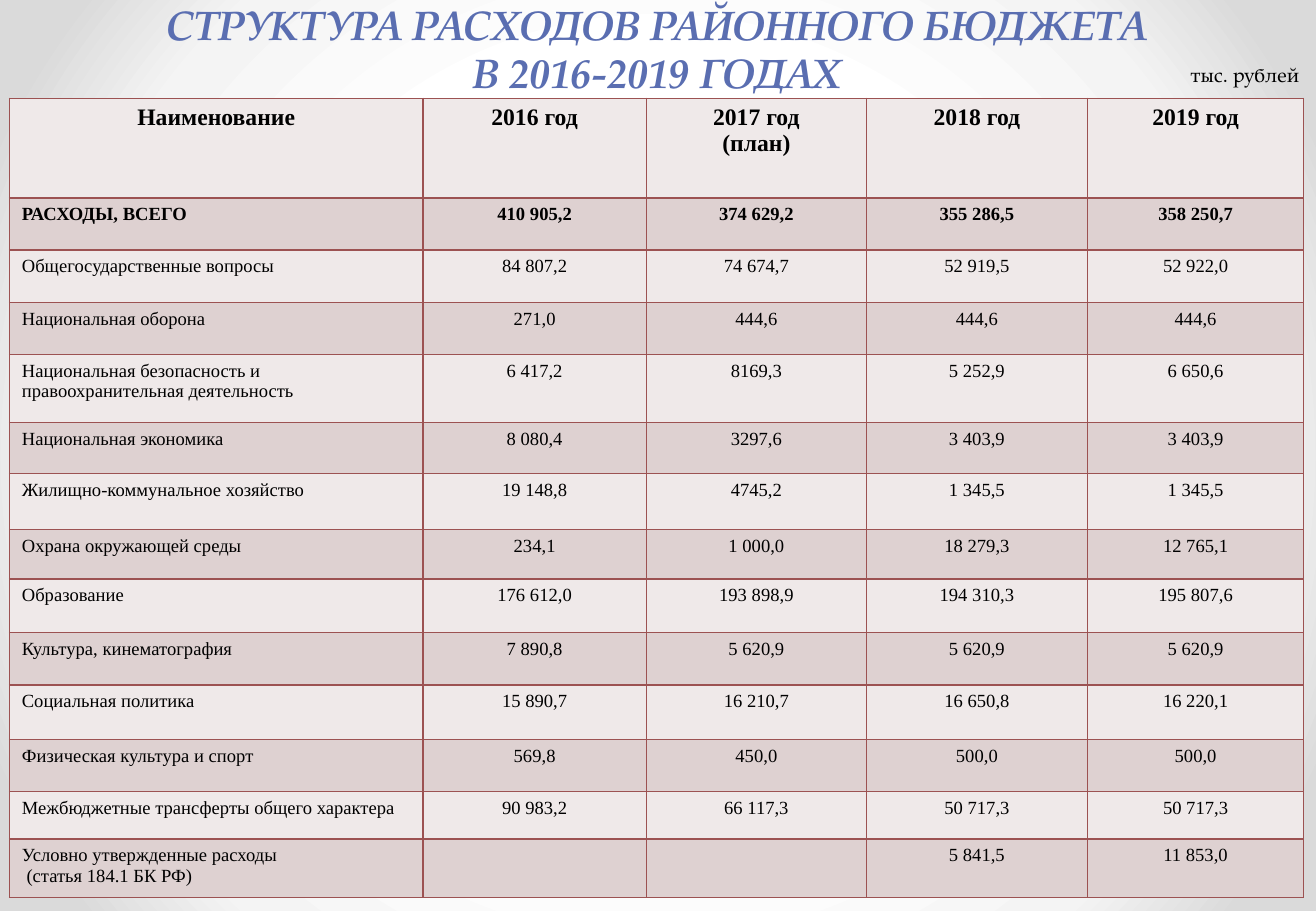
from dataclasses import dataclass

from lxml import etree
from pptx import Presentation
from pptx import util as u
from pptx.dml import color, fill as fills
from pptx.enum import text
from pptx.oxml import ns
from pptx.slide import Slide
from pptx.table import _Cell
from pptx.text.text import TextFrame

Inches, Pt, RGBColor = u.Inches, u.Pt, color.RGBColor

BLACK = RGBColor(0x00, 0x00, 0x00)
LIGHT_ROW = RGBColor(0xEF, 0xE9, 0xE9)
DARK_ROW = RGBColor(0xDE, 0xD1, 0xD1)
BORDER = RGBColor(0x9C, 0x52, 0x52)
PAGE_STOPS = [
    (50, RGBColor(0xFF, 0xFF, 0xFF)),
    (76, RGBColor(0xF4, 0xF4, 0xF4)),
    (92, RGBColor(0xDA, 0xDA, 0xDA)),
]
TITLE_STOPS = [
    (0, RGBColor(0x7D, 0x8B, 0xC0)),
    (49, RGBColor(0x5A, 0x6E, 0xB1)),
    (50, RGBColor(0x45, 0x5D, 0xA0)),
    (92, RGBColor(0x41, 0x54, 0x8B)),
    (100, RGBColor(0x40, 0x53, 0x89)),
]
TITLE_FONT = "TeX Gyre Pagella"
TABLE_FONT = "Times New Roman"
TITLE = "СТРУКТУРА РАСХОДОВ РАЙОННОГО БЮДЖЕТА\vВ 2016-2019 ГОДАХ"
COLUMN_WIDTHS = [3.4, 1.84, 1.81, 1.82, 1.78]


@dataclass
class BudgetRow:
    height: float
    name: str
    values: list[str]
    size: float = 11
    bold: bool = False
    name_align: text.PP_ALIGN = text.PP_ALIGN.LEFT


ROWS = [
    BudgetRow(0.82, "Наименование", ["2016 год", "2017 год\n(план)", "2018 год", "2019 год"],
              14, True, text.PP_ALIGN.CENTER),
    BudgetRow(0.43, "РАСХОДЫ, ВСЕГО",
              ["410 905,2", "374 629,2", "355 286,5", "358 250,7"], bold=True),
    BudgetRow(0.43, "Общегосударственные вопросы",
              ["84 807,2", "74 674,7", "52 919,5", "52 922,0"]),
    BudgetRow(0.43, "Национальная оборона", ["271,0", "444,6", "444,6", "444,6"]),
    BudgetRow(0.56, "Национальная безопасность и правоохранительная деятельность",
              ["6 417,2", "8169,3", "5 252,9", "6 650,6"]),
    BudgetRow(0.42, "Национальная экономика", ["8 080,4", "3297,6", "3 403,9", "3 403,9"]),
    BudgetRow(0.46, "Жилищно-коммунальное хозяйство",
              ["19 148,8", "4745,2", "1 345,5", "1 345,5"]),
    BudgetRow(0.41, "Охрана окружающей среды", ["234,1", "1 000,0", "18 279,3", "12 765,1"]),
    BudgetRow(0.44, "Образование", ["176 612,0", "193 898,9", "194 310,3", "195 807,6"]),
    BudgetRow(0.43, "Культура, кинематография", ["7 890,8", "5 620,9", "5 620,9", "5 620,9"]),
    BudgetRow(0.45, "Социальная политика", ["15 890,7", "16 210,7", "16 650,8", "16 220,1"]),
    BudgetRow(0.43, "Физическая культура и спорт", ["569,8", "450,0", "500,0", "500,0"]),
    BudgetRow(0.39, "Межбюджетные трансферты общего характера",
              ["90 983,2", "66 117,3", "50 717,3", "50 717,3"]),
    BudgetRow(0.48, "Условно утвержденные расходы\n (статья 184.1 БК РФ)",
              ["", "", "5 841,5", "11 853,0"]),
]


def apply(target: object, values: dict) -> None:
    """Set every attribute named in values."""
    for name, value in values.items():
        setattr(target, name, value)


def add_stops(parent: etree._Element, stops: list[tuple[int, RGBColor]]) -> None:
    for position, shade in stops:
        stop = etree.SubElement(parent, ns.qn("a:gs"), pos=str(position * 1000))
        etree.SubElement(stop, ns.qn("a:srgbClr"), val=str(shade))


def set_gradient(fill: fills.FillFormat, owner: etree._Element,
                 stops: list[tuple[int, RGBColor]], circular: bool = False) -> None:
    """Fill with the stops, from the centre outwards or from top to bottom."""
    fill.gradient()
    gradient = owner.find(".//" + ns.qn("a:gradFill"))
    for child in list(gradient):
        gradient.remove(child)
    add_stops(etree.SubElement(gradient, ns.qn("a:gsLst")), stops)
    if circular:
        route = etree.SubElement(gradient, ns.qn("a:path"), path="circle")
        etree.SubElement(route, ns.qn("a:fillToRect"),
                         dict.fromkeys("ltrb", "50000"))
    else:
        etree.SubElement(gradient, ns.qn("a:lin"), ang="5400000", scaled="0")


def write(frame: TextFrame, wording: str, align: text.PP_ALIGN, font: dict) -> None:
    frame.text = wording
    for para in frame.paragraphs:
        para.alignment = align
        for span in para.runs:
            apply(span.font, font)
            span.font.color.rgb = BLACK


def add_borders(cell: _Cell) -> None:
    properties = cell._tc.get_or_add_tcPr()
    for index, side in enumerate(("lnL", "lnR", "lnT", "lnB")):
        line = etree.Element(ns.qn(f"a:{side}"), w=str(Pt(1)))
        solid = etree.SubElement(line, ns.qn("a:solidFill"))
        etree.SubElement(solid, ns.qn("a:srgbClr"), val=str(BORDER))
        properties.insert(index, line)


def add_title(page: Slide) -> None:
    box = page.shapes.title
    apply(box, {"left": Inches(-0.11), "top": Inches(0),
                "width": Inches(11.03), "height": Inches(1.04)})
    frame = box.text_frame
    apply(frame, {"text": TITLE, "word_wrap": True, "auto_size": text.MSO_AUTO_SIZE.NONE,
                  "vertical_anchor": text.MSO_ANCHOR.BOTTOM,
                  "margin_left": Inches(0.11), "margin_right": Inches(0.11),
                  "margin_top": Inches(0), "margin_bottom": Inches(0.24)})
    para = frame.paragraphs[0]
    apply(para, {"alignment": text.PP_ALIGN.CENTER, "line_spacing": Pt(29)})
    for span in para.runs:
        apply(span.font, {"name": TITLE_FONT, "size": Pt(24.3), "bold": True, "italic": True})
        set_gradient(span.font.fill, span._r, TITLE_STOPS)


def add_budget_table(page: Slide) -> None:
    table = page.shapes.add_table(
        len(ROWS), len(COLUMN_WIDTHS), Inches(0.08), Inches(0.81),
        Inches(sum(COLUMN_WIDTHS)), Inches(sum(row.height for row in ROWS))).table
    apply(table, {"first_row": False, "horz_banding": False})
    for column, width in zip(table.columns, COLUMN_WIDTHS):
        column.width = Inches(width)
    for index, row in enumerate(ROWS):
        table.rows[index].height = Inches(row.height)
        font = {"name": TABLE_FONT, "size": Pt(row.size), "bold": row.bold}
        for position, wording in enumerate([row.name, *row.values]):
            cell = table.cell(index, position)
            align = text.PP_ALIGN.CENTER if position else row.name_align
            write(cell.text_frame, wording, align, font)
            cell.fill.solid()
            cell.fill.fore_color.rgb = DARK_ROW if index % 2 else LIGHT_ROW
            add_borders(cell)


def add_unit_label(page: Slide) -> None:
    box = page.shapes.add_textbox(Inches(9.7), Inches(0.46), Inches(1.14), Inches(0.3))
    apply(box.text_frame, {"word_wrap": True,
                           "auto_size": text.MSO_AUTO_SIZE.SHAPE_TO_FIT_TEXT})
    write(box.text_frame, "тыс. рублей", text.PP_ALIGN.LEFT,
          {"name": TITLE_FONT, "size": Pt(12)})


def main() -> None:
    deck = Presentation()
    apply(deck, {"slide_width": Inches(10.83), "slide_height": Inches(7.5)})
    page = deck.slides.add_slide(deck.slide_layouts[5])
    set_gradient(page.background.fill, page.element, PAGE_STOPS, circular=True)
    add_title(page)
    add_budget_table(page)
    add_unit_label(page)
    deck.save("out.pptx")


if __name__ == "__main__":
    main()
